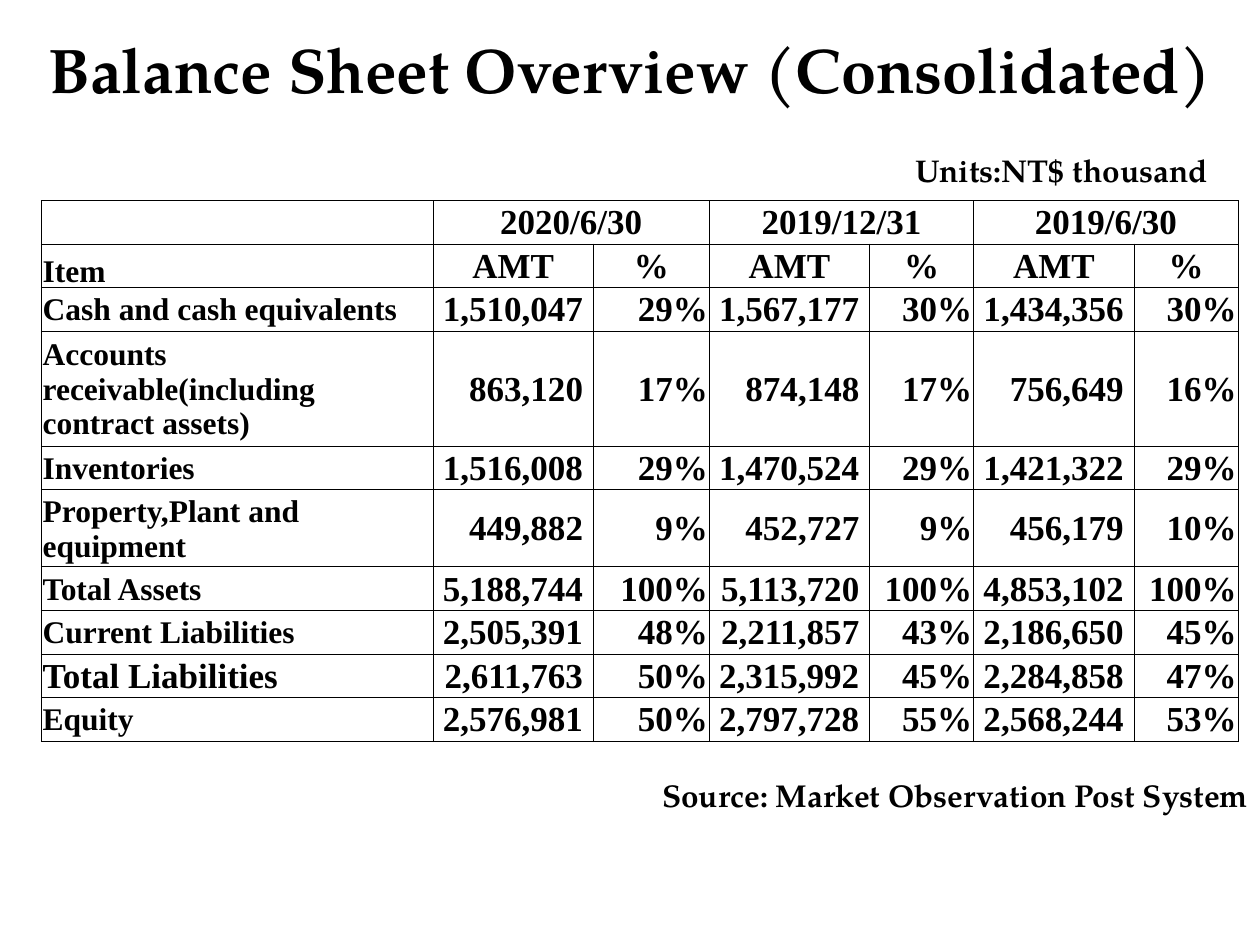
from dataclasses import dataclass

from lxml import etree
from pptx import Presentation
from pptx import util as u
from pptx.dml.color import RGBColor
from pptx.enum import text
from pptx.oxml.ns import qn


@dataclass(frozen=True)
class Theme:
    ink: str = "000000"
    heading_font: str = "TeX Gyre Pagella"
    table_font: str = "Times New Roman"
    title_size: int = 36
    note_size: int = 18
    label_size: int = 18
    figure_size: int = 20
    border_width: float = 0.5


LEFT, CENTER, RIGHT = text.PP_ALIGN.LEFT, text.PP_ALIGN.CENTER, text.PP_ALIGN.RIGHT

# Table content: label, then amount and percentage for each date
DATES = ["2020/6/30", "2019/12/31", "2019/6/30"]
ITEMS = [
    ("Cash and cash equivalents", 1510047, 29, 1567177, 30, 1434356, 30),
    ("Accounts receivable(including contract assets)", 863120, 17, 874148, 17, 756649, 16),
    ("Inventories", 1516008, 29, 1470524, 29, 1421322, 29),
    ("Property,Plant and equipment", 449882, 9, 452727, 9, 456179, 10),
    ("Total Assets", 5188744, 100, 5113720, 100, 4853102, 100),
    ("Current Liabilities", 2505391, 48, 2211857, 43, 2186650, 45),
    ("Total Liabilities", 2611763, 50, 2315992, 45, 2284858, 47),
    ("Equity", 2576981, 50, 2797728, 55, 2568244, 53),
]
COLUMN_WIDTHS = [7.9, 3.23, 2.34, 3.23, 2.1, 3.23, 2.1]
ROW_HEIGHT = 0.87
TALL_ROWS = {3: 2.32, 5: 1.55}


class SlideBuilder:
    def __init__(self, slide, theme):
        self.slide = slide
        self.theme = theme

    def set_text(self, text_frame, content, size, font, align):
        text_frame.text = content
        paragraph = text_frame.paragraphs[0]
        paragraph.alignment = align
        for style in [paragraph.font] + [run.font for run in paragraph.runs]:
            style.name = font
            style.size = u.Pt(size)
            style.bold = True
            style.color.rgb = RGBColor.from_string(self.theme.ink)

    def text_box(self, content, left, top, width, height, size, align=LEFT):
        box = self.slide.shapes.add_textbox(u.Cm(left), u.Cm(top), u.Cm(width), u.Cm(height))
        text_frame = box.text_frame
        text_frame.word_wrap = True
        text_frame.vertical_anchor = text.MSO_ANCHOR.MIDDLE
        self.set_text(text_frame, content, size, self.theme.heading_font, align)

    def table(self, left, top, widths, heights):
        frame = self.slide.shapes.add_table(
            len(heights), len(widths), u.Cm(left), u.Cm(top),
            u.Cm(sum(widths)), u.Cm(sum(heights)))
        table = frame.table
        table.first_row = table.horz_banding = False
        for column, width in zip(table.columns, widths):
            column.width = u.Cm(width)
        for row, height in zip(table.rows, heights):
            row.height = u.Cm(height)
        for cell in table.iter_cells():
            self.style_cell(cell)
        return table

    def style_cell(self, cell):
        cell.margin_left = cell.margin_right = cell.margin_top = u.Cm(0.03)
        cell.margin_bottom = 0
        cell.vertical_anchor = text.MSO_ANCHOR.MIDDLE
        properties = cell._tc.get_or_add_tcPr()
        for side in ("a:lnL", "a:lnR", "a:lnT", "a:lnB"):
            line = etree.SubElement(properties, qn(side), w=str(u.Pt(self.theme.border_width)))
            fill = etree.SubElement(line, qn("a:solidFill"))
            etree.SubElement(fill, qn("a:srgbClr"), val=self.theme.ink)
        cell.fill.background()

    def cell_text(self, cell, content, align, size=None):
        self.set_text(cell.text_frame, content, size or self.theme.figure_size,
                      self.theme.table_font, align)


def main():
    presentation = Presentation()
    presentation.slide_width, presentation.slide_height = u.Cm(25.4), u.Cm(19.05)
    theme = Theme()
    builder = SlideBuilder(presentation.slides.add_slide(presentation.slide_layouts[6]), theme)

    # Title and notes
    builder.text_box("Balance Sheet Overview (Consolidated)",
                     0.5, 0.43, 24.4, 1.9, theme.title_size, CENTER)
    builder.text_box("Units:NT$ thousand", 18.21, 2.92, 6.73, 1.02, theme.note_size)
    builder.text_box("Source: Market Observation Post System",
                     13.1, 15.52, 13.08, 1.02, theme.note_size)

    # Table frame
    heights = [TALL_ROWS.get(row, ROW_HEIGHT) for row in range(len(ITEMS) + 2)]
    table = builder.table(0.83, 4.04, COLUMN_WIDTHS, heights)

    # Two header rows
    builder.cell_text(table.cell(1, 0), "Item　", LEFT, theme.label_size)
    for index, date in enumerate(DATES):
        column = 1 + 2 * index
        table.cell(0, column).merge(table.cell(0, column + 1))
        builder.cell_text(table.cell(0, column), date, CENTER)
        builder.cell_text(table.cell(1, column), "AMT", CENTER)
        builder.cell_text(table.cell(1, column + 1), "%", CENTER)

    # Item rows
    for row, (label, *figures) in enumerate(ITEMS, start=2):
        size = theme.figure_size if label == "Total Liabilities" else theme.label_size
        builder.cell_text(table.cell(row, 0), label, LEFT, size)
        for column, figure in enumerate(figures, start=1):
            content = f"{figure:,} " if column % 2 else f"{figure}%"
            builder.cell_text(table.cell(row, column), content, RIGHT)

    presentation.save("out.pptx")


if __name__ == "__main__":
    main()
